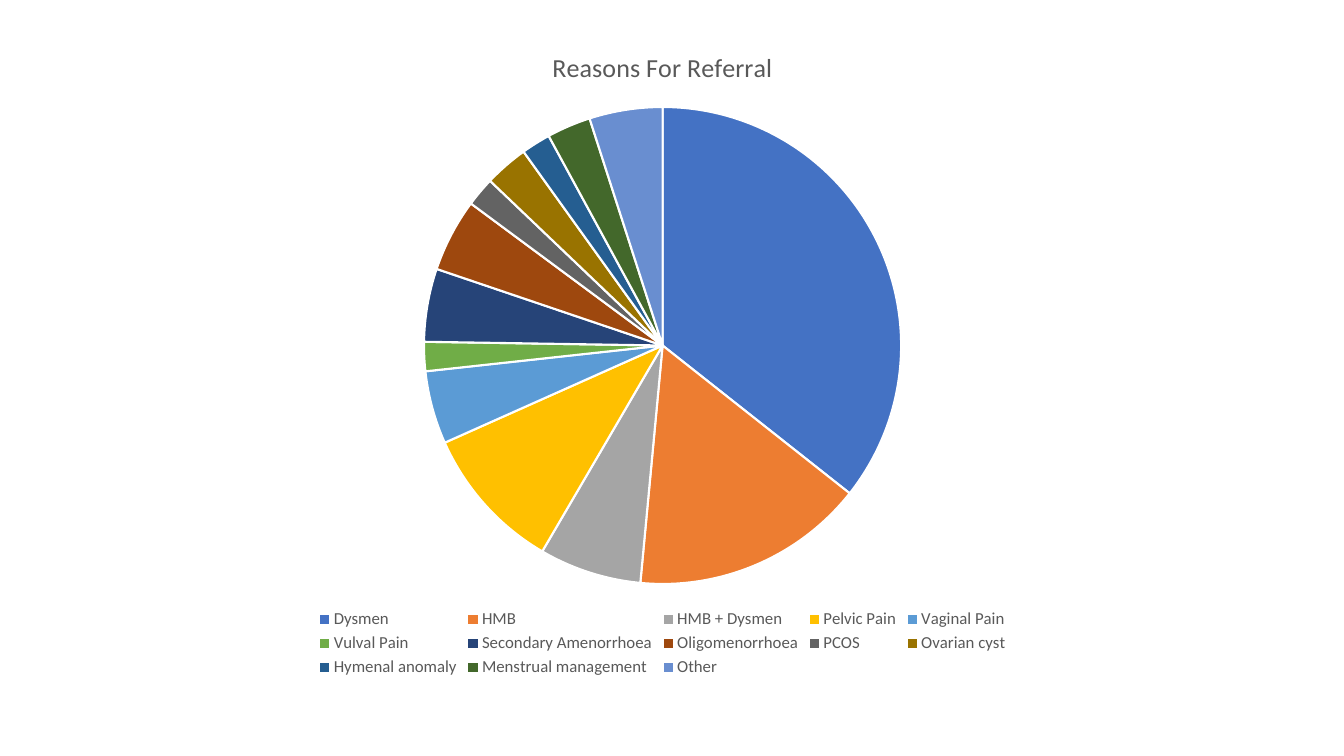
import pptx
import pptx.chart.data
import pptx.dml.color
import pptx.enum.chart
import pptx.util

RGBColor = pptx.dml.color.RGBColor
WHITE = RGBColor(0xFF, 0xFF, 0xFF)
GREY_TEXT = RGBColor(0x59, 0x59, 0x59)
BLUE = RGBColor(0x44, 0x72, 0xC4)
ORANGE = RGBColor(0xED, 0x7D, 0x31)
GREY = RGBColor(0xA5, 0xA5, 0xA5)
GOLD = RGBColor(0xFF, 0xC0, 0x00)
SKY = RGBColor(0x5B, 0x9B, 0xD5)
GREEN = RGBColor(0x70, 0xAD, 0x47)
NAVY = RGBColor(0x26, 0x44, 0x78)
RUST = RGBColor(0x9E, 0x48, 0x0E)
DARK_GREY = RGBColor(0x63, 0x63, 0x63)
BRONZE = RGBColor(0x99, 0x73, 0x00)
TEAL = RGBColor(0x25, 0x5E, 0x91)
FOREST = RGBColor(0x43, 0x68, 0x2B)
PERIWINKLE = RGBColor(0x69, 0x8E, 0xD0)

# Reason, share of referrals in percent, slice colour
REFERRALS = [
    ("Dysmen", 36, BLUE),
    ("HMB", 16, ORANGE),
    ("HMB + Dysmen", 7, GREY),
    ("Pelvic Pain", 10, GOLD),
    ("Vaginal Pain", 5, SKY),
    ("Vulval Pain", 2, GREEN),
    ("Secondary Amenorrhoea", 5, NAVY),
    ("Oligomenorrhoea", 5, RUST),
    ("PCOS", 2, DARK_GREY),
    ("Ovarian cyst", 3, BRONZE),
    ("Hymenal anomaly", 2, TEAL),
    ("Menstrual management", 3, FOREST),
    ("Other", 5, PERIWINKLE),
]


class SlideBuilder:
    """Holds the style and the current slide; boxes are shares of its size."""

    font_name = "Calibri"
    title_size = 18.6
    legend_size = 12

    def __init__(self, presentation):
        self.slide = presentation.slides.add_slide(presentation.slide_layouts[6])
        self.width = presentation.slide_width
        self.height = presentation.slide_height

    def style_font(self, font, size):
        font.name = self.font_name
        font.size = pptx.util.Pt(size)
        font.bold = False
        font.color.rgb = GREY_TEXT

    def add_pie(self, title, rows, left, top, width, height):
        """Add a pie chart with a title above and a legend below."""
        names, values, colours = zip(*rows)
        data = pptx.chart.data.CategoryChartData()
        data.categories = names
        data.add_series("Series 1", values)
        chart = self.slide.shapes.add_chart(
            pptx.enum.chart.XL_CHART_TYPE.PIE,
            int(self.width * left), int(self.height * top),
            int(self.width * width), int(self.height * height), data).chart
        self.style_font(chart.font, 10)

        # Title
        chart.has_title = True
        chart.chart_title.include_in_layout = False
        paragraph = chart.chart_title.text_frame.paragraphs[0]
        paragraph.text = title
        self.style_font(paragraph.font, self.title_size)

        # Legend
        chart.has_legend = True
        chart.legend.position = pptx.enum.chart.XL_LEGEND_POSITION.BOTTOM
        chart.legend.include_in_layout = False
        self.style_font(chart.legend.font, self.legend_size)

        # Slices
        plot = chart.plots[0]
        plot.vary_by_categories = True
        for index, colour in enumerate(colours):
            slice_format = plot.series[0].points[index].format
            slice_format.fill.solid()
            slice_format.fill.fore_color.rgb = colour
            slice_format.line.color.rgb = WHITE
            slice_format.line.width = pptx.util.Pt(1.5)


def main():
    presentation = pptx.Presentation()
    presentation.slide_width = pptx.util.Inches(13.33)
    presentation.slide_height = pptx.util.Inches(7.5)

    # Referral chart
    builder = SlideBuilder(presentation)
    builder.add_pie("Reasons For Referral", REFERRALS,
                    left=0.104, top=0.035, width=0.778, height=0.866)

    presentation.save("out.pptx")


if __name__ == "__main__":
    main()
